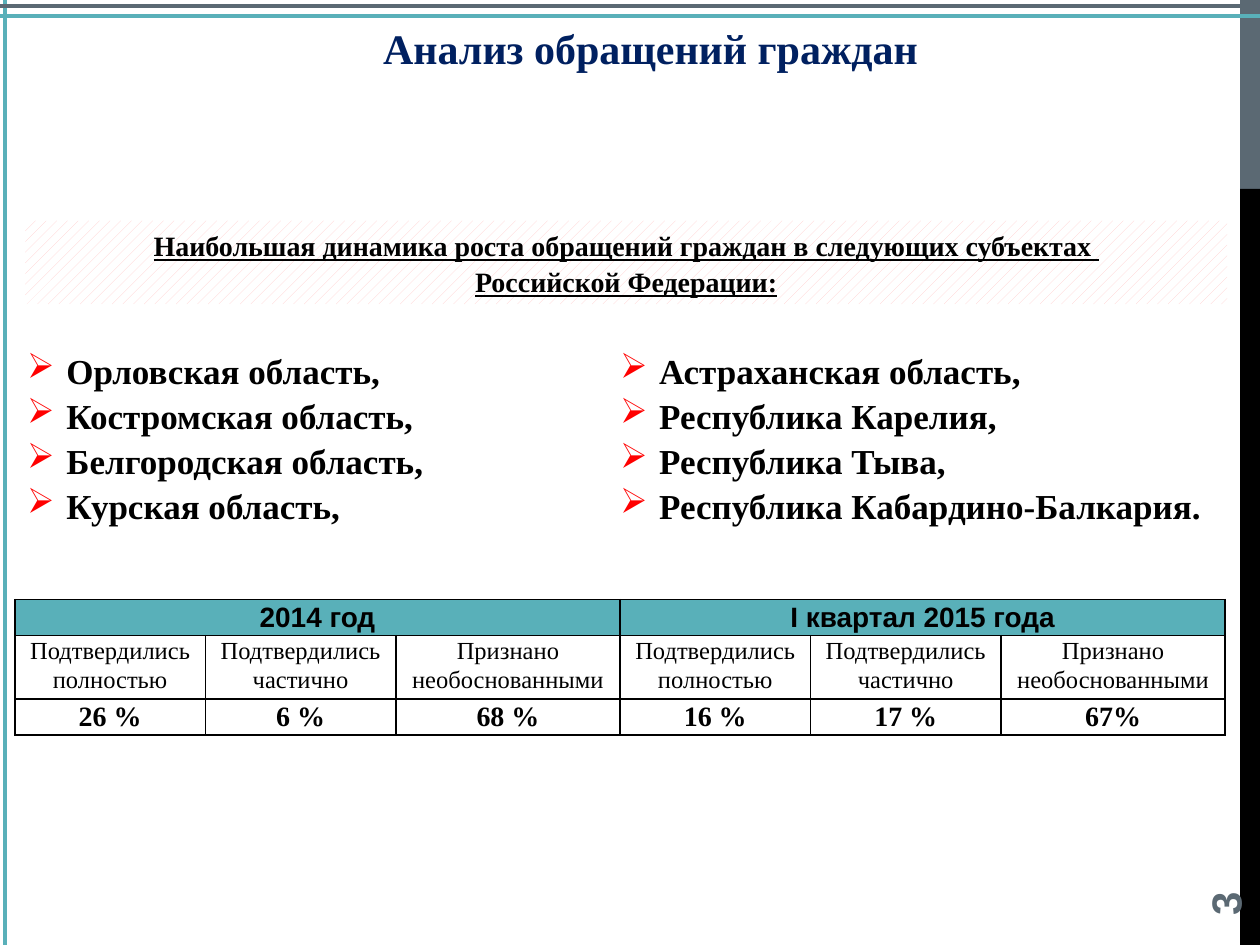
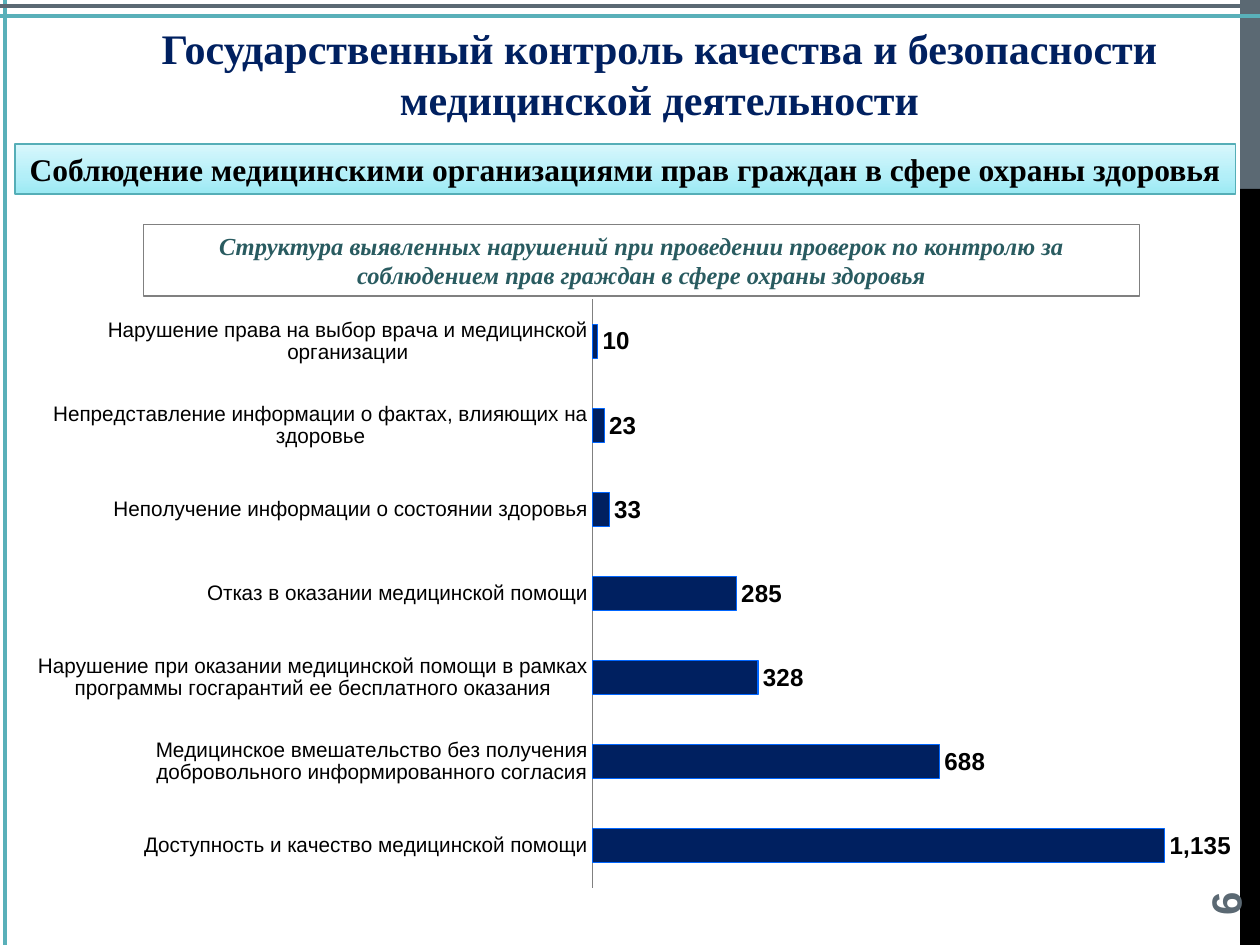
import copy

import pptx
import pptx.chart.data
import pptx.dml.color
import pptx.enum.chart
import pptx.enum.dml
import pptx.enum.shapes
import pptx.enum.text
import pptx.oxml.ns
import pptx.oxml.xmlchemy
import pptx.util

Cm = pptx.util.Cm
Pt = pptx.util.Pt
RGBColor = pptx.dml.color.RGBColor
ALIGN = pptx.enum.text.PP_ALIGN
ANCHOR = pptx.enum.text.MSO_ANCHOR
RECT = pptx.enum.shapes.MSO_SHAPE.RECTANGLE
qn = pptx.oxml.ns.qn
make = pptx.oxml.xmlchemy.OxmlElement

BLACK = RGBColor(0x00, 0x00, 0x00)
WHITE = RGBColor(0xFF, 0xFF, 0xFF)
SLATE = RGBColor(0x5B, 0x69, 0x73)
TEAL = RGBColor(0x59, 0xB0, 0xB9)
DARK_TEAL = RGBColor(0x29, 0x5B, 0x60)
EDGE = RGBColor(0x55, 0xAE, 0xB7)
NAVY = RGBColor(0x00, 0x20, 0x60)
BLUE = RGBColor(0x00, 0x66, 0xFF)
GRAY = RGBColor(0x80, 0x80, 0x80)
PINK = RGBColor(0xFF, 0xCC, 0xCC)
RED = RGBColor(0xFF, 0x00, 0x00)
GLOW = (
    (0, RGBColor(0x9A, 0xE9, 0xF3)),
    (0.35, RGBColor(0xB2, 0xEF, 0xF8)),
    (1, RGBColor(0xD8, 0xF7, 0xFC)),
)

SERIF = "Times New Roman"
SANS = "Arial"
WIDE, HIGH = 25.4, 19.05

AREAS = (
    ("Орловская область,", "Костромская область,",
     "Белгородская область,", "Курская область,"),
    ("Астраханская область,", "Республика Карелия,",
     "Республика Тыва,", "Республика Кабардино-Балкария."),
)
YEARS = ("2014 год", "I квартал 2015 года")
KINDS = ("Подтвердились полностью", "Подтвердились частично",
         "Признано необоснованными")
SHARES = ("26 %", "6 %", "68 %", "16 %", "17 %", "67%")
FAULTS = (
    ("Доступность и качество медицинской помощи", 1135),
    ("Медицинское вмешательство без получения добровольного "
     "информированного согласия", 688),
    ("Нарушение при оказании медицинской помощи в рамках программы "
     "госгарантий ее бесплатного оказания", 328),
    ("Отказ в оказании медицинской помощи", 285),
    ("Неполучение информации о состоянии здоровья", 33),
    ("Непредставление информации о фактах, влияющих на здоровье", 23),
    ("Нарушение права на выбор врача и медицинской организации", 10),
)


def place(*sides):
    return [Cm(side) for side in sides]


def style(font, size, color=BLACK, name=SERIF, bold=True):
    font.size = Pt(size)
    font.name = name
    font.bold = bold
    font.color.rgb = color


def write(frame, text, size, color=BLACK, name=SERIF, bold=True,
          align=ALIGN.CENTER, space=None):
    frame.text = text
    for para in frame.paragraphs:
        para.alignment = align
        para.line_spacing = space
        for run in para.runs:
            style(run.font, size, color, name, bold)


def add_box(slide, spot):
    box = slide.shapes.add_shape(RECT, *place(*spot))
    box.shadow.inherit = False
    box.line.fill.background()
    frame = box.text_frame
    frame.word_wrap = True
    frame.vertical_anchor = ANCHOR.MIDDLE
    return box


def add_band(slide, spot, color):
    band = add_box(slide, spot)
    band.fill.solid()
    band.fill.fore_color.rgb = color


def add_rule(slide, ends, color):
    rule = slide.shapes.add_connector(
        pptx.enum.shapes.MSO_CONNECTOR.STRAIGHT, *place(*ends))
    rule.line.color.rgb = color
    rule.line.width = Pt(2.25)
    rule._element.spPr.append(make("a:effectLst"))


def add_page(deck, title, spot, number):
    slide = deck.slides.add_slide(deck.slide_layouts[5])
    add_band(slide, (25, 0, 0.4, 3.81), SLATE)
    add_band(slide, (25, 3.81, 0.4, 15.24), BLACK)
    add_rule(slide, (WIDE, 0.33, 0, 0.33), TEAL)
    add_rule(slide, (0.1, 0, 0.1, HIGH), TEAL)
    add_rule(slide, (0, 0.13, WIDE, 0.13), SLATE)

    head = slide.shapes.title
    head.left, head.top, head.width, head.height = place(*spot)
    frame = head.text_frame
    frame.auto_size = pptx.enum.text.MSO_AUTO_SIZE.NONE
    frame.word_wrap = True
    frame.vertical_anchor = ANCHOR.TOP
    write(frame, title, 24, NAVY)

    mark = slide.shapes.add_textbox(*place(22.86, 16.36, 3.66, 1.02))
    mark.rotation = 270
    mark.text_frame.word_wrap = True
    mark.text_frame.vertical_anchor = ANCHOR.MIDDLE
    write(mark.text_frame, number, 24, SLATE, SANS, align=ALIGN.LEFT)
    return slide


def add_hatch(slide, spot, text):
    box = add_box(slide, spot)
    box.fill.patterned()
    box.fill.pattern = pptx.enum.dml.MSO_PATTERN.PERCENT_20
    box.fill.fore_color.rgb = PINK
    box.fill.back_color.rgb = WHITE
    write(box.text_frame, text, 16, space=1.07)
    for para in box.text_frame.paragraphs:
        for run in para.runs:
            run.font.underline = True


def make_tint(tag, color):
    holder = make(tag)
    tint = make("a:srgbClr")
    tint.set("val", str(color))
    holder.append(tint)
    return holder


def add_bullet(para):
    props = para._p.get_or_add_pPr()
    indent = Cm(0.79)
    props.set("marL", str(int(indent)))
    props.set("indent", str(-int(indent)))
    sign = make("a:buChar")
    sign.set("char", "➢")
    props.extend((make_tint("a:buClr", RED), sign))


def add_list(slide, spot, items):
    frame = slide.shapes.add_textbox(*place(*spot)).text_frame
    frame.word_wrap = True
    write(frame, "\n".join(items), 20, align=ALIGN.JUSTIFY, space=1.07)
    for para in frame.paragraphs:
        add_bullet(para)


def add_edges(cell):
    props = cell._tc.get_or_add_tcPr()
    for spot, side in enumerate(("L", "R", "T", "B")):
        edge = make(f"a:ln{side}")
        edge.set("w", str(int(Pt(1))))
        edge.append(make_tint("a:solidFill", BLACK))
        props.insert(spot, edge)


def fill_cell(cell, text, size, name, bold, color):
    cell.margin_left = cell.margin_right = Cm(0.18)
    cell.margin_top = cell.margin_bottom = Cm(0)
    write(cell.text_frame, text, size, name=name, bold=bold, space=1.07)
    cell.fill.solid()
    cell.fill.fore_color.rgb = color
    add_edges(cell)


def add_grid(slide, spot):
    grid = slide.shapes.add_table(3, 6, *place(*spot)).table
    grid.first_row = grid.horz_banding = False
    for col, width in zip(grid.columns, (3.84, 3.84, 4.52) * 2):
        col.width = Cm(width)
    for row, height in zip(grid.rows, (0.72, 1.28, 0.72)):
        row.height = Cm(height)
    for start in (0, 3):
        grid.cell(0, start).merge(grid.cell(0, start + 2))
    years = [text for year in YEARS for text in (year, "", "")]
    rows = (
        (years, 16, SANS, True, TEAL),
        (KINDS * 2, 14, SERIF, False, WHITE),
        (SHARES, 16, SERIF, True, WHITE),
    )
    for row, (texts, *look) in enumerate(rows):
        for col, text in enumerate(texts):
            fill_cell(grid.cell(row, col), text, *look)


def add_banner(slide, spot, text):
    box = add_box(slide, spot)
    box.fill.gradient()
    box.fill.gradient_angle = 90
    stops = box._element.spPr.find(f".//{qn('a:gsLst')}")
    stops.insert(1, copy.deepcopy(stops[0]))
    for stop, (point, color) in zip(box.fill.gradient_stops, GLOW):
        stop.position = point
        stop.color.rgb = color
    box.line.color.rgb = EDGE
    box.line.width = Pt(1)
    write(box.text_frame, text, 18)


def add_note(slide, spot, text):
    box = add_box(slide, spot)
    box.fill.solid()
    box.fill.fore_color.rgb = WHITE
    box.line.color.rgb = GRAY
    box.line.width = Pt(0.75)
    write(box.text_frame, text, 14, DARK_TEAL)
    box.text_frame.paragraphs[0].runs[0].font.italic = True


def set_plot(chart, **sides):
    area = chart._chartSpace.chart.plotArea
    frame = area.find(qn("c:layout"))
    if frame is None:
        frame = make("c:layout")
        area.insert(0, frame)
    inner = make("c:manualLayout")
    frame.append(inner)
    parts = {"layoutTarget": "inner", "xMode": "edge", "yMode": "edge"}
    for tag, value in {**parts, **sides}.items():
        part = make(f"c:{tag}")
        part.set("val", str(value))
        inner.append(part)


def add_bars(slide, spot):
    data = pptx.chart.data.CategoryChartData(number_format="#,##0")
    names, counts = zip(*FAULTS)
    data.categories = names
    data.add_series("Series 1", counts)
    chart = slide.shapes.add_chart(
        pptx.enum.chart.XL_CHART_TYPE.BAR_CLUSTERED, *place(*spot), data).chart
    style(chart.font, 18, name=SANS, bold=False)
    chart.has_title = chart.has_legend = False
    set_plot(chart, x=0.48, y=0.11, w=0.52, h=0.86)

    scale = chart.value_axis
    scale.visible = scale.has_major_gridlines = False
    scale.minimum_scale, scale.maximum_scale = 0, 1230
    axis = chart.category_axis
    axis.major_tick_mark = pptx.enum.chart.XL_TICK_MARK.NONE
    axis.format.line.color.rgb = GRAY
    style(axis.tick_labels.font, 12, name=SANS, bold=False)

    plot = chart.plots[0]
    plot.gap_width = 150
    plot.vary_by_categories = False
    bars = plot.series[0].format
    bars.fill.solid()
    bars.fill.fore_color.rgb = NAVY
    bars.line.color.rgb = BLUE
    bars.line.width = Pt(0.75)
    plot.has_data_labels = True
    labels = plot.data_labels
    labels.show_value = True
    labels.number_format = "#,##0"
    labels.number_format_is_linked = False
    labels.position = pptx.enum.chart.XL_LABEL_POSITION.OUTSIDE_END
    style(labels.font, 14, name=SANS)


def main():
    deck = pptx.Presentation()
    deck.slide_width, deck.slide_height = place(WIDE, HIGH)

    slide = add_page(deck, "Анализ обращений граждан",
                     (1.52, 0.33, 23.19, 1.27), "3")
    add_hatch(slide, (0.51, 4.45, 24.23, 1.68),
              "Наибольшая динамика роста обращений граждан в следующих "
              "субъектах \nРоссийской Федерации:")
    for col, items in enumerate(AREAS):
        add_list(slide, (0.3 + 11.95 * col, 6.86, 12.4, 3.9), items)
    add_grid(slide, (0.3, 12.09, 24.4, 2.72))

    slide = add_page(deck, "Государственный контроль качества и безопасности "
                     "медицинской деятельности", (1.7, 0.33, 23.19, 2.31), "6")
    add_banner(slide, (0.3, 2.9, 24.61, 1.02),
               "Соблюдение медицинскими организациями прав граждан "
               "в сфере охраны здоровья")
    add_bars(slide, (0.41, 4.52, 24.41, 13.79))
    add_note(slide, (2.9, 4.52, 20.07, 1.45),
             "Структура выявленных нарушений при проведении проверок по "
             "контролю за соблюдением прав граждан в сфере охраны здоровья")
    deck.save("out.pptx")


if __name__ == "__main__":
    main()
